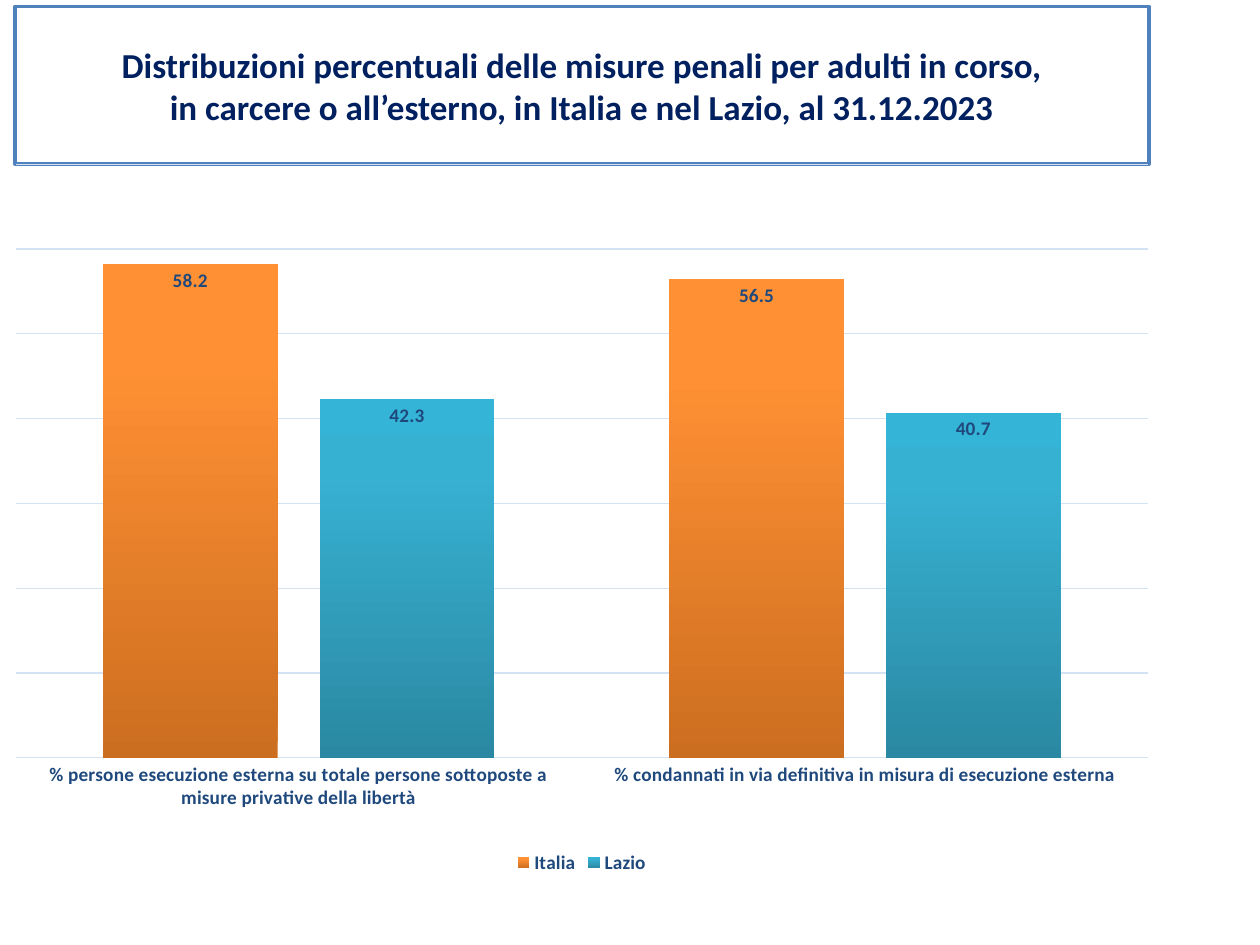
from copy import deepcopy
from dataclasses import dataclass

from lxml.etree import SubElement
from pptx import Presentation
from pptx.chart.chart import Chart
from pptx.chart.data import CategoryChartData
from pptx.chart.series import BarSeries
from pptx.dml.color import RGBColor as Color
from pptx.enum.chart import XL_CHART_TYPE as ChartType
from pptx.enum.chart import XL_LABEL_POSITION as LabelPosition
from pptx.enum.chart import XL_LEGEND_POSITION as LegendPosition
from pptx.enum.chart import XL_TICK_LABEL_POSITION as TickLabelPosition
from pptx.enum.chart import XL_TICK_MARK as TickMark
from pptx.enum.text import MSO_ANCHOR as Anchor
from pptx.enum.text import MSO_AUTO_SIZE as AutoSize
from pptx.enum.text import PP_ALIGN as Align
from pptx.oxml.ns import qn
from pptx.slide import Slide
from pptx.text.text import Font
from pptx.util import Cm, Pt


@dataclass(frozen=True)
class Theme:
    font: str = "Calibri"
    title_size: float = 20
    chart_size: float = 11
    paper: str = "FFFFFF"
    title_text: str = "002060"
    title_border: str = "4F81BD"
    chart_text: str = "1F497D"
    grid: str = "D4E3F4"


@dataclass(frozen=True)
class Region:
    name: str
    values: tuple[float, ...]
    gradient: tuple[tuple[float, str], ...]


THEME = Theme()
LEFT, WIDTH = Cm(0.3), Cm(22.86)
TITLE_LINES = (
    "Distribuzioni percentuali delle misure penali per adulti in corso,",
    "in carcere o all’esterno, in Italia e nel Lazio, al 31.12.2023",
)
CATEGORIES = (
    "% persone esecuzione esterna su totale persone sottoposte a misure privative della libertà",
    "% condannati in via definitiva in misura di esecuzione esterna",
)
REGIONS = (
    Region("Italia", (58.2, 56.5), ((0, "CC6E20"), (0.8, "FF9034"), (1, "FF9136"))),
    Region("Lazio", (42.3, 40.7), ((0, "2A88A2"), (0.8, "37B1D2"), (1, "34B4D6"))),
)
PLOT_AREA = {"x": 0, "y": 0, "w": 1, "h": 0.83}


def style_font(font: Font, size: float, color: str) -> None:
    font.name = THEME.font
    font.size = Pt(size)
    font.bold = True
    font.color.rgb = Color.from_string(color)


def add_title(page: Slide) -> None:
    box = page.shapes.title
    box.left, box.top, box.width, box.height = LEFT, Cm(0.13), WIDTH, Cm(3.18)
    box.fill.solid()
    box.fill.fore_color.rgb = Color.from_string(THEME.paper)
    box.line.color.rgb = Color.from_string(THEME.title_border)
    box.line.width = Pt(2)
    frame = box.text_frame
    frame.text = "\n".join(TITLE_LINES)
    frame.auto_size = AutoSize.NONE
    frame.word_wrap = True
    frame.vertical_anchor = Anchor.MIDDLE
    for para in frame.paragraphs:
        para.alignment = Align.CENTER
        para.space_before = Pt(0)
        style_font(para.font, THEME.title_size, THEME.title_text)


def place_plot(chart: Chart) -> None:
    area = chart._chartSpace.find(".//" + qn("c:plotArea"))
    for old_layout in area.findall(qn("c:layout")):
        area.remove(old_layout)
    layout = SubElement(area, qn("c:layout"))
    area.insert(0, layout)
    manual = SubElement(layout, qn("c:manualLayout"))
    settings = {"layoutTarget": "inner", "xMode": "edge", "yMode": "edge", **PLOT_AREA}
    for tag, value in settings.items():
        SubElement(manual, qn(f"c:{tag}")).set("val", str(value))


def style_series(series: BarSeries, region: Region) -> None:
    fill = series.format.fill
    fill.gradient()
    fill.gradient_angle = 90
    stops = series._element.find(".//" + qn("a:gsLst"))
    stops.append(deepcopy(stops[-1]))
    for stop, (position, color) in zip(fill.gradient_stops, region.gradient):
        stop.position = position
        stop.color.rgb = Color.from_string(color)
    series.format.line.fill.background()
    labels = series.data_labels
    labels.show_value = True
    labels.position = LabelPosition.INSIDE_END
    labels.number_format = "0.0"
    labels.number_format_is_linked = False
    style_font(labels.font, THEME.chart_size, THEME.chart_text)


def style_axes(chart: Chart) -> None:
    category_axis, value_axis = chart.category_axis, chart.value_axis
    category_axis.major_tick_mark = TickMark.NONE
    category_axis.tick_label_position = TickLabelPosition.NEXT_TO_AXIS
    style_font(category_axis.tick_labels.font, THEME.chart_size, THEME.chart_text)
    value_axis.minimum_scale, value_axis.maximum_scale = 0, 70
    value_axis.major_unit = 10
    value_axis.has_major_gridlines = True
    value_axis.visible = False
    for line in (category_axis.format.line, value_axis.major_gridlines.format.line):
        line.color.rgb = Color.from_string(THEME.grid)
        line.width = Pt(0.75)


def add_chart(page: Slide) -> None:
    data = CategoryChartData()
    data.categories = CATEGORIES
    for region in REGIONS:
        data.add_series(region.name, region.values)
    chart = page.shapes.add_chart(
        ChartType.COLUMN_CLUSTERED, LEFT, Cm(3.3), WIDTH, Cm(14.43), data
    ).chart
    chart.has_title = False
    style_font(chart.font, THEME.chart_size, THEME.chart_text)
    plot = chart.plots[0]
    plot.vary_by_categories = False
    plot.gap_width, plot.overlap = 100, -24
    for series, region in zip(plot.series, REGIONS):
        style_series(series, region)
    style_axes(chart)
    chart.has_legend = True
    chart.legend.position = LegendPosition.BOTTOM
    chart.legend.include_in_layout = False
    style_font(chart.legend.font, THEME.chart_size, THEME.chart_text)
    place_plot(chart)


def main() -> None:
    deck = Presentation()
    deck.slide_width, deck.slide_height = Cm(25.4), Cm(19.05)
    page = deck.slides.add_slide(deck.slide_layouts.get_by_name("Title Only"))
    add_title(page)
    add_chart(page)
    deck.save("out.pptx")


if __name__ == "__main__":
    main()
